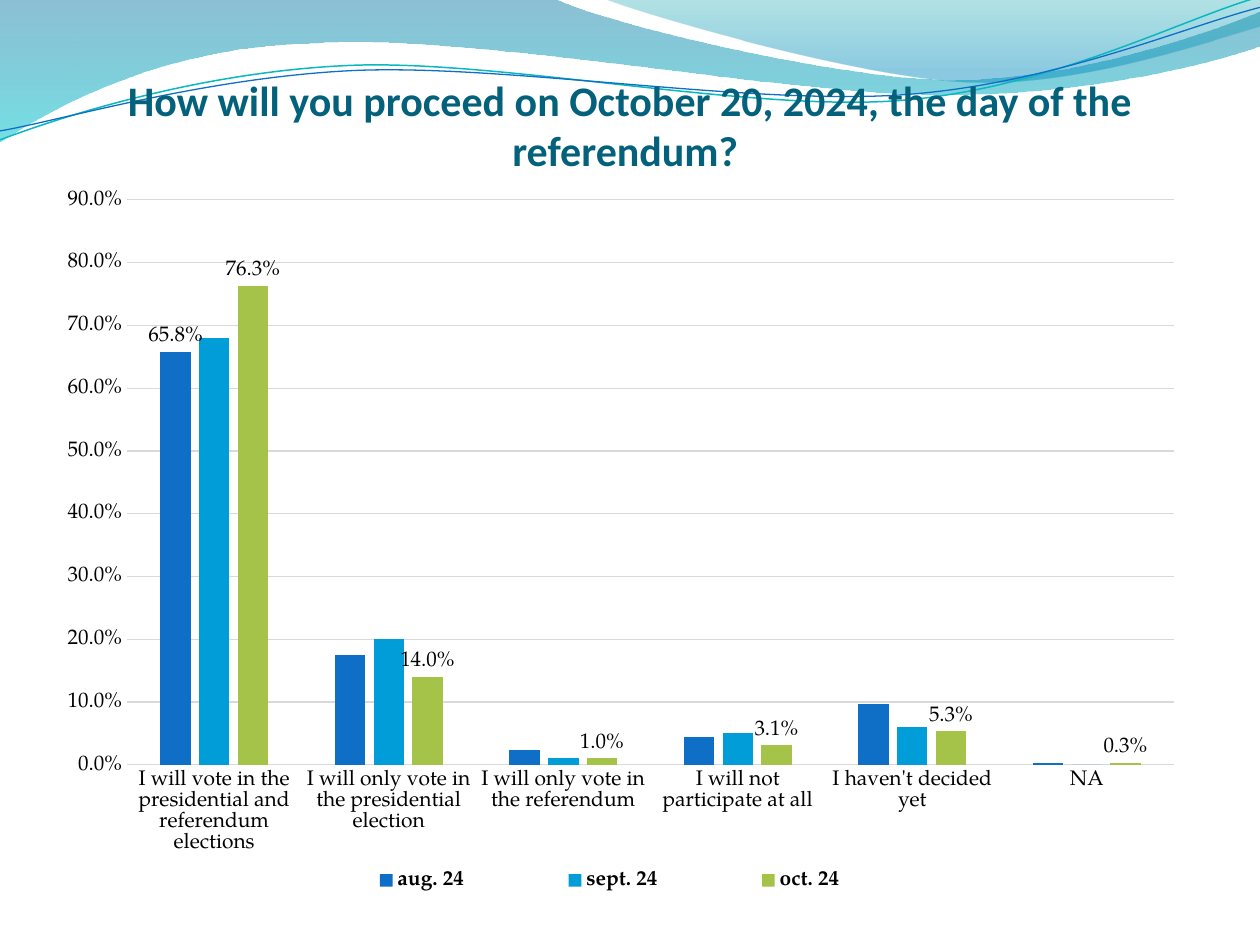
import lxml.etree
import pptx
import pptx.chart.data
import pptx.dml.color
import pptx.enum.chart
import pptx.enum.text
import pptx.oxml.ns
import pptx.util

Cm, Pt, qn = pptx.util.Cm, pptx.util.Pt, pptx.oxml.ns.qn

COLORS = {
    "title": "04617B", "text": "000000", "grid": "D9D9D9",
    "aug": "0F6FC6", "sept": "009DD9", "oct": "A5C249",
    "band_top": "0074A1", "band_end": "00C6CF",
    "crest_top": "00A1A9", "crest_end": "008BBF",
    "teal_wave": "0AB8BF", "blue_wave": "0F6FC6",
}
CHART_FONT = "TeX Gyre Pagella"
CHART_WIDTH, CHART_HEIGHT = Cm(23.24), Cm(14.78)

BAND = [
    ((0, 0),), ((11.18, -0.03),),
    ((12.09, 0.43), (16.87, 1.6), (19.25, 1.6)),
    ((21.67, 1.6), (24.33, 0.66), (25.4, 0.23)),
    ((25.43, 0.91),),
    ((24.97, 1.12), (22.1, 1.93), (18.95, 1.91)),
    ((15.8, 1.91), (9.7, 0.71), (6.53, 0.86)),
    ((3.28, 0.91), (1.17, 2.11), (-0.03, 2.87)),
]
CREST = [
    ((12.17, -0.03),),
    ((12.93, 0.28), (17.32, 1.57), (19.53, 1.65)),
    ((21.74, 1.75), (24.41, 0.81), (25.4, 0.53)),
    ((25.4, 0),),
]
TEAL_WAVE = [
    ((0, 2.82),),
    ((1.22, 2.36), (4.01, 1.45), (7.04, 1.32)),
    ((10.03, 1.19), (15.06, 2.26), (18.11, 2.03)),
    ((21.16, 1.8), (23.83, 0.38), (25.35, -0.05)),
]
BLUE_WAVE = [
    ((0, 2.64),),
    ((1.19, 2.44), (4.17, 1.55), (7.19, 1.42)),
    ((10.24, 1.3), (15.16, 2.13), (18.21, 1.91)),
    ((21.23, 1.7), (23.9, 0.53), (25.4, 0.15)),
]

CATEGORIES = [
    "I will vote in the presidential and referendum elections",
    "I will only vote in the presidential election",
    "I will only vote in the referendum",
    "I will not participate at all",
    "I haven't decided yet",
    "NA",
]
SURVEYS = [
    ("aug. 24", "aug", (0.658, 0.175, 0.023, 0.044, 0.097, 0.003)),
    ("sept. 24", "sept", (0.68, 0.2, 0.01, 0.05, 0.06, 0)),
    ("oct. 24", "oct", (0.763, 0.14, 0.01, 0.031, 0.053, 0.003)),
]


def rgb(name):
    """Return the named palette colour."""
    return pptx.dml.color.RGBColor.from_string(COLORS[name])


def style_font(font, size, color, name, bold=False):
    """Set the size, colour, typeface and weight of a font."""
    font.size, font.name, font.bold = Pt(size), name, bold
    font.color.rgb = rgb(color)


def add_outline(slide, outline, close):
    """Draw a freeform whose three-point pieces are cubic curves."""
    start, *rest = [(Cm(x), Cm(y)) for piece in outline for x, y in piece]
    builder = slide.shapes.build_freeform(*start)
    builder.add_line_segments(rest, close=close)
    shape = builder.convert_to_shape()
    shape.shadow.inherit = False
    segments = iter(list(shape._element.iter(qn("a:lnTo"))))
    for piece in outline[1:]:
        steps = [next(segments) for _ in piece]
        if len(piece) == 3:
            curve = lxml.etree.Element(qn("a:cubicBezTo"))
            steps[0].addprevious(curve)
            for step in steps:
                curve.append(step[0])
                step.getparent().remove(step)
    return shape


def add_swoosh(slide, outline, stops):
    """Add a closed wave with a translucent vertical gradient."""
    swoosh = add_outline(slide, outline, True)
    swoosh.line.fill.background()
    swoosh.fill.gradient()
    swoosh.fill.gradient_angle = 270
    for stop, (position, color, opacity) in zip(swoosh.fill.gradient_stops, stops):
        stop.position = position
        stop.color.rgb = rgb(color)
    tints = swoosh._element.spPr.iter(qn("a:srgbClr"))
    for tint, (position, color, opacity) in zip(tints, stops):
        lxml.etree.SubElement(tint, qn("a:alpha"), val=str(opacity * 1000))


def add_wave_line(slide, outline, color, width):
    """Add an open wavy line."""
    wave = add_outline(slide, outline, False)
    wave.fill.background()
    wave.line.color.rgb = rgb(color)
    wave.line.width = Pt(width)


def add_title(slide, text):
    """Add the centred question at the top."""
    box = slide.shapes.add_textbox(Cm(1.27), Cm(1.52), Cm(22.86), Cm(2.01))
    frame = box.text_frame
    frame.word_wrap = True
    frame.vertical_anchor = pptx.enum.text.MSO_ANCHOR.BOTTOM
    frame.margin_left = frame.margin_right = frame.margin_bottom = 0
    frame.margin_top = Cm(0.13)
    frame.text = text
    question = frame.paragraphs[0]
    question.alignment = pptx.enum.text.PP_ALIGN.CENTER
    style_font(question.runs[0].font, 24, "title", "Calibri", True)


def place_part(part, index, left, top, width, height, inner=False):
    """Give a chart part a fixed place within the chart."""
    for old in part.findall(qn("c:layout")):
        part.remove(old)
    layout = lxml.etree.Element(qn("c:layout"))
    manual = lxml.etree.SubElement(layout, qn("c:manualLayout"))
    if inner:
        lxml.etree.SubElement(manual, qn("c:layoutTarget"), val="inner")
    for tag in ("xMode", "yMode"):
        lxml.etree.SubElement(manual, qn("c:" + tag), val="edge")
    bounds = (left / CHART_WIDTH, top / CHART_HEIGHT, width / CHART_WIDTH, height / CHART_HEIGHT)
    for tag, value in zip("xywh", bounds):
        lxml.etree.SubElement(manual, qn("c:" + tag), val=str(value))
    part.insert(index, layout)


def style_axes(chart):
    """Format both axes and the gridlines."""
    for axis in (chart.category_axis, chart.value_axis):
        axis.major_tick_mark = axis.minor_tick_mark = pptx.enum.chart.XL_TICK_MARK.NONE
        style_font(axis.tick_labels.font, 12, "text", CHART_FONT)
    shares = chart.value_axis
    shares.tick_labels.number_format = "0.0%"
    shares.tick_labels.number_format_is_linked = False
    shares.format.line.fill.background()
    for line in (chart.category_axis.format.line, shares.major_gridlines.format.line):
        line.color.rgb = rgb("grid")
        line.width = Pt(0.75)


def style_columns(chart):
    """Colour the surveys and show the chosen value labels."""
    plot = chart.plots[0]
    plot.gap_width, plot.overlap, plot.vary_by_categories = 219, -27, False
    for series, (_, color, _) in zip(plot.series, SURVEYS):
        series.format.fill.solid()
        series.format.fill.fore_color.rgb = rgb(color)
    august, _, october = plot.series
    outside = pptx.enum.chart.XL_LABEL_POSITION.OUTSIDE_END
    first_label = august.points[0].data_label
    first_label.position = outside
    style_font(first_label.font, 12, "text", CHART_FONT)
    august.data_labels.show_value = False
    labels = october.data_labels
    labels.show_value, labels.position = True, outside
    labels.number_format, labels.number_format_is_linked = "0.0%", False
    style_font(labels.font, 12, "text", CHART_FONT)


def add_survey_chart(slide):
    """Add the clustered columns with their legend."""
    data = pptx.chart.data.CategoryChartData(number_format="0.0%")
    data.categories = CATEGORIES
    for name, _, values in SURVEYS:
        data.add_series(name, values)
    chart = slide.shapes.add_chart(
        pptx.enum.chart.XL_CHART_TYPE.COLUMN_CLUSTERED,
        Cm(0.89), Cm(3.53), CHART_WIDTH, CHART_HEIGHT, data).chart
    chart.has_title = False
    style_font(chart.font, 12, "text", CHART_FONT)
    style_axes(chart)
    style_columns(chart)
    chart.has_legend = True
    chart.legend.position = pptx.enum.chart.XL_LEGEND_POSITION.BOTTOM
    chart.legend.include_in_layout = False
    style_font(chart.legend.font, 12, "text", CHART_FONT, True)
    plot_area = chart._chartSpace.chart.plotArea
    place_part(plot_area, 0, Cm(1.67), Cm(0.5), Cm(21.11), Cm(11.39), True)
    place_part(chart.legend._element, 1, Cm(4.8), Cm(13.77), Cm(13.2), Cm(0.9))


def main():
    """Build and save the slide."""
    deck = pptx.Presentation()
    deck.slide_width, deck.slide_height = Cm(25.4), Cm(19.05)
    slide = deck.slides.add_slide(deck.slide_layouts[6])
    add_swoosh(slide, BAND, ((0, "band_top", 45), (1, "band_end", 55)))
    add_swoosh(slide, CREST, ((0, "crest_top", 30), (0.8, "crest_end", 45)))
    add_wave_line(slide, TEAL_WAVE, "teal_wave", 0.85)
    add_wave_line(slide, BLUE_WAVE, "blue_wave", 0.75)
    add_title(slide, "How will you proceed on October 20, 2024, the day of the referendum? ")
    add_survey_chart(slide)
    deck.save("out.pptx")


if __name__ == "__main__":
    main()
